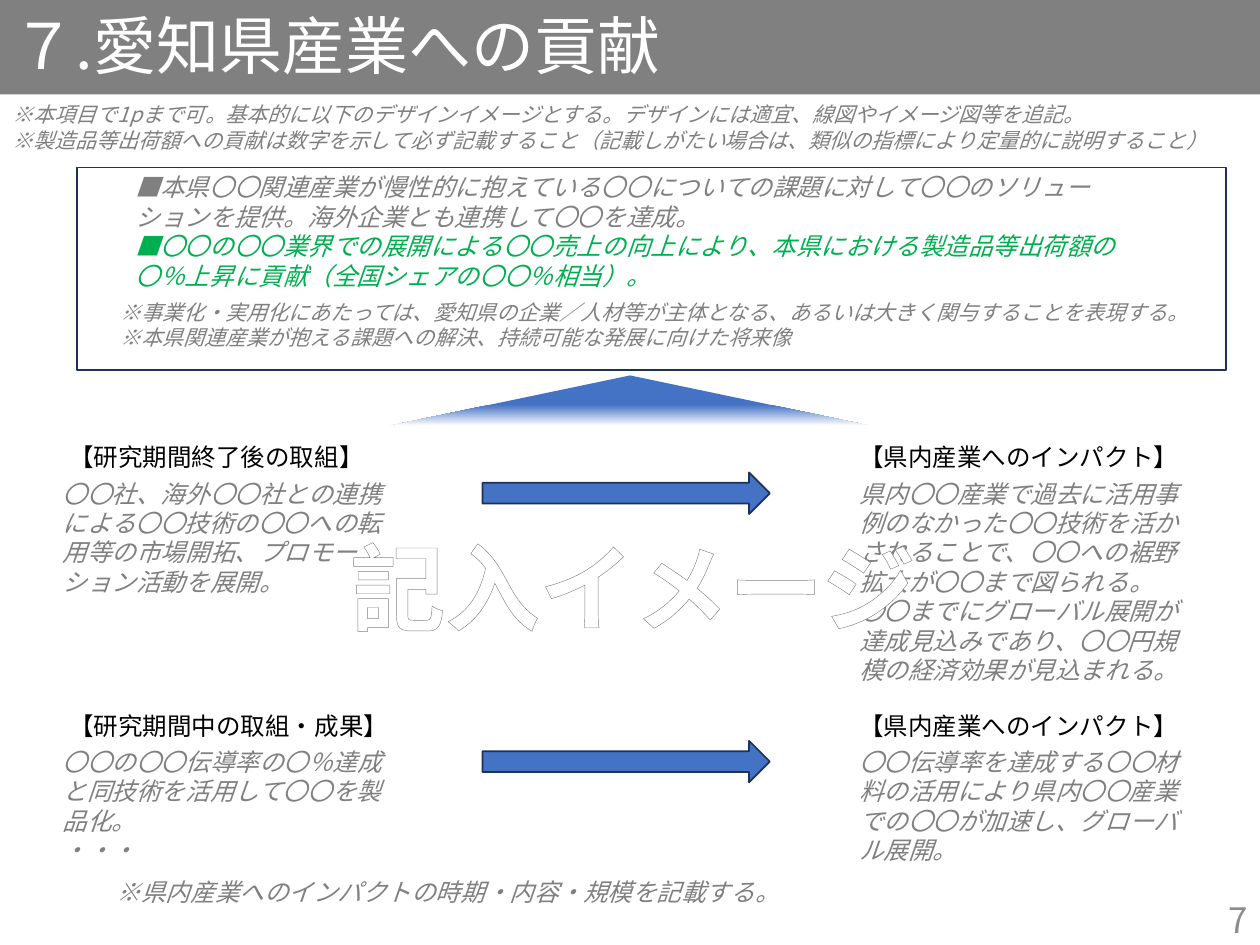
from lxml.etree import SubElement
from pptx import Presentation
from pptx.dml.color import RGBColor
from pptx.enum.shapes import MSO_SHAPE
from pptx.enum.text import MSO_ANCHOR, PP_ALIGN
from pptx.oxml import parse_xml
from pptx.oxml.ns import nsdecls, qn
from pptx.util import Inches, Pt

GRAY = RGBColor(0x80, 0x80, 0x80)
PAGE_GRAY = RGBColor(0x8C, 0x8C, 0x8C)
WHITE = RGBColor(0xFF, 0xFF, 0xFF)
BLACK = RGBColor(0, 0, 0)
GREEN = RGBColor(0x00, 0xB0, 0x50)
BLUE = RGBColor(0x44, 0x72, 0xC4)
NAVY = RGBColor(0x1E, 0x32, 0x56)
FONT = "Noto Sans CJK JP"

LEFT_X, RIGHT_X = 0.4, 6.72
COLUMN_WIDTH = 2.75

# Each stage: top, left heading, left paragraphs, right paragraphs
STAGES = [
    (3.46, "【研究期間終了後の取組】",
     ["〇〇社、海外〇〇社との連携による〇〇技術の〇〇への転用等の市場開拓、プロモーション活動を展開。"],
     ["県内〇〇産業で過去に活用事例のなかった〇〇技術を活かされることで、〇〇への裾野拡大が〇〇まで図られる。",
      "〇〇までにグローバル展開が達成見込みであり、〇〇円規模の経済効果が見込まれる。"]),
    (5.59, "【研究期間中の取組・成果】",
     ["〇〇の〇〇伝導率の〇％達成と同技術を活用して〇〇を製品化。", "・・・"],
     ["〇〇伝導率を達成する〇〇材料の活用により県内〇〇産業での〇〇が加速し、グローバル展開。"]),
]
IMPACT = "【県内産業へのインパクト】"


def write(frame, paragraphs, size=14, color=GRAY, italic=False, bold=False,
          font=FONT, align=PP_ALIGN.LEFT, anchor=MSO_ANCHOR.TOP, wrap=True):
    """Fill a text frame; color may be one colour or one per paragraph."""
    frame.word_wrap = wrap
    frame.vertical_anchor = anchor
    colors = color if isinstance(color, list) else [color] * len(paragraphs)
    for index, (text, shade) in enumerate(zip(paragraphs, colors)):
        para = frame.paragraphs[0] if index == 0 else frame.add_paragraph()
        para.alignment = align
        span = para.add_run()
        span.text = text
        span.font.size = Pt(size)
        span.font.bold = bold
        span.font.italic = italic
        span.font.color.rgb = shade
        span.font.name = font
        SubElement(span.font._element, qn("a:ea")).set("typeface", FONT)


def add_text(page, left, top, width, height, paragraphs, **style):
    box = page.shapes.add_textbox(Inches(left), Inches(top), Inches(width), Inches(height))
    write(box.text_frame, paragraphs, **style)
    return box


def add_shape(page, kind, left, top, width, height, fill=None, line=None):
    shape = page.shapes.add_shape(kind, Inches(left), Inches(top), Inches(width), Inches(height))
    shape.shadow.inherit = False
    if fill is None:
        shape.fill.background()
    else:
        shape.fill.solid()
        shape.fill.fore_color.rgb = fill
    if line is None:
        shape.line.fill.background()
    else:
        shape.line.color.rgb = line
        shape.line.width = Pt(1)
    return shape


def add_title(page, text):
    title = page.shapes.title
    title.left, title.top = Inches(0), Inches(0)
    title.width, title.height = Inches(10), Inches(0.75)
    title.fill.solid()
    title.fill.fore_color.rgb = GRAY
    write(title.text_frame, [text], size=36, color=WHITE)


def add_fading_triangle(page):
    triangle = add_shape(page, MSO_SHAPE.ISOSCELES_TRIANGLE, 3.09, 2.98, 3.82, 0.4)
    triangle.fill.gradient()
    triangle.fill.gradient_angle = 270
    for stop, position, color in zip(triangle.fill.gradient_stops, (0.58, 1), (BLUE, WHITE)):
        stop.position = position
        stop.color.rgb = color


def add_stage(page, top, heading, efforts, impacts):
    add_text(page, 0.45, top, COLUMN_WIDTH, 0.33, [heading], color=BLACK)
    add_text(page, RIGHT_X, top, COLUMN_WIDTH, 0.33, [IMPACT], color=BLACK)
    for left, paragraphs in ((LEFT_X, efforts), (RIGHT_X, impacts)):
        add_text(page, left, top + 0.29, COLUMN_WIDTH, 1.2, paragraphs, italic=True)
    add_shape(page, MSO_SHAPE.RIGHT_ARROW, 3.83, top + 0.29, 2.28, 0.33, fill=BLUE, line=NAVY)


def add_outlined_text(page, text):
    box = add_text(page, 2.65, 4.15, 4.75, 1.01, [text], size=54, color=WHITE, bold=True,
                   font="Calibri", align=PP_ALIGN.CENTER, wrap=False)
    outline = parse_xml(
        f'<a:ln {nsdecls("a")} w="{Pt(0.8)}"><a:solidFill>'
        f'<a:srgbClr val="{GRAY}"/></a:solidFill></a:ln>')
    box.text_frame.paragraphs[0].runs[0].font._element.insert(0, outline)


def main():
    deck = Presentation()
    deck.slide_width, deck.slide_height = Inches(10), Inches(7.5)
    page = deck.slides.add_slide(deck.slide_layouts[5])

    # Title band and page number
    add_title(page, "７.愛知県産業への貢献")
    add_text(page, 7.75, 7.1, 2.25, 0.4, ["7"], size=20, color=PAGE_GRAY,
             align=PP_ALIGN.RIGHT, anchor=MSO_ANCHOR.MIDDLE)

    # Instructions under the title
    add_text(page, 0, 0.76, 10.09, 0.55, [
        "※本項目で1pまで可。基本的に以下のデザインイメージとする。デザインには適宜、線図やイメージ図等を追記。",
        "※製造品等出荷額への貢献は数字を示して必ず記載すること（記載しがたい場合は、類似の指標により定量的に説明すること）",
    ], size=12, italic=True)

    # Framed goal
    add_shape(page, MSO_SHAPE.RECTANGLE, 0.61, 1.33, 9.12, 1.61, line=NAVY)
    add_text(page, 0.98, 1.32, 8.08, 0.63, [
        "■本県〇〇関連産業が慢性的に抱えている〇〇についての課題に対して〇〇のソリューションを提供。海外企業とも連携して〇〇を達成。",
        "■〇〇の〇〇業界での展開による〇〇売上の向上により、本県における製造品等出荷額の〇％上昇に貢献（全国シェアの〇〇％相当）。",
    ], color=[GRAY, GREEN], italic=True)
    add_text(page, 0.86, 2.33, 8.62, 0.64, [
        "※事業化・実用化にあたっては、愛知県の企業／人材等が主体となる、あるいは大きく関与することを表現する。",
        "※本県関連産業が抱える課題への解決、持続可能な発展に向けた将来像",
    ], size=12, italic=True)
    add_fading_triangle(page)

    # Efforts leading to impacts
    for stage in STAGES:
        add_stage(page, *stage)
    add_text(page, 0.83, 6.91, 7.7, 0.49,
             ["※県内産業へのインパクトの時期・内容・規模を記載する。"], italic=True)
    add_outlined_text(page, "記入イメージ")

    deck.save("out.pptx")


if __name__ == "__main__":
    main()
